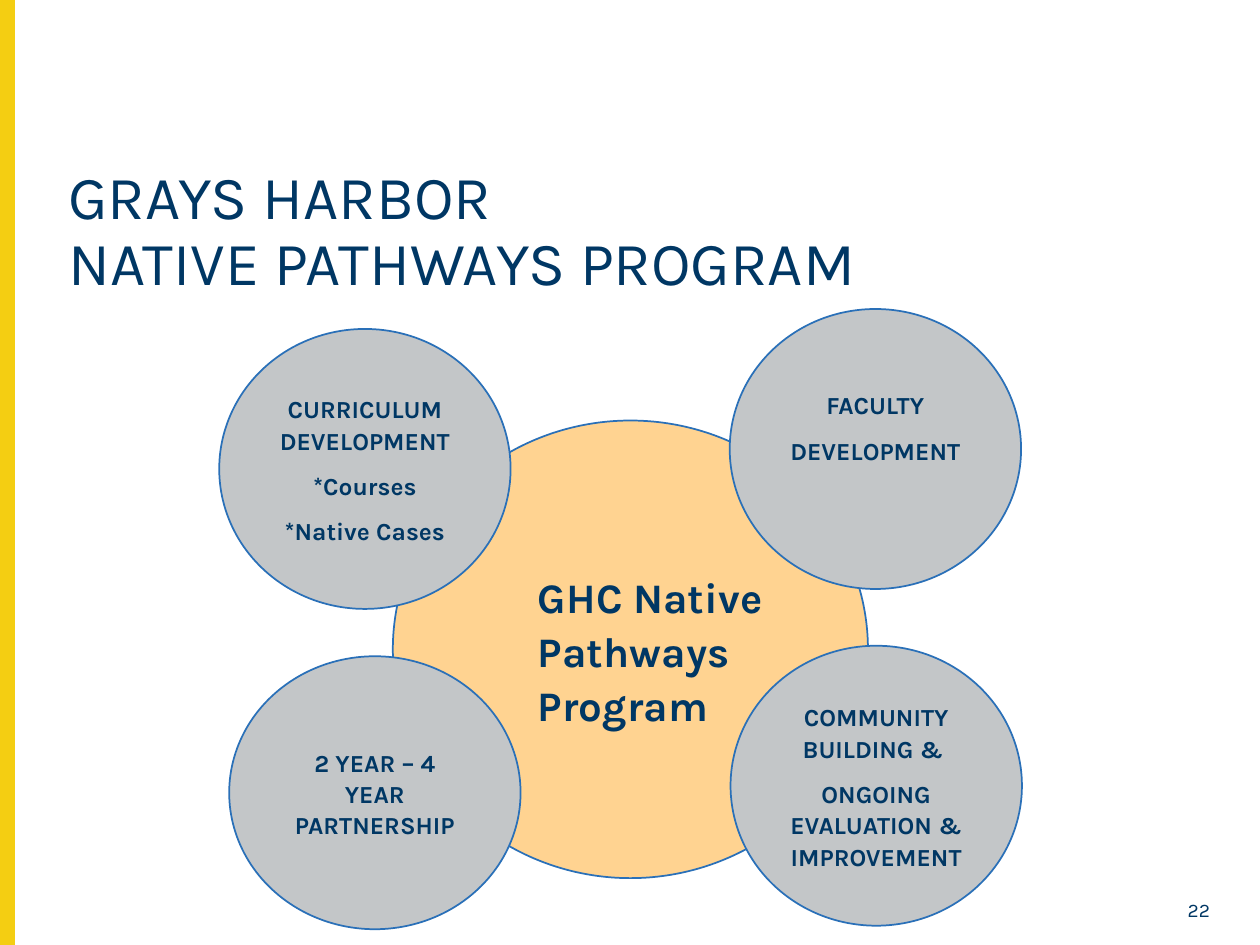
from pptx import Presentation
from pptx.dml.color import RGBColor
from pptx.enum.shapes import MSO_SHAPE
from pptx.enum.text import MSO_ANCHOR, PP_ALIGN
from pptx.util import Pt

NAVY = RGBColor(0x00, 0x37, 0x64)
GOLD = RGBColor(0xF4, 0xCE, 0x12)
PEACH = RGBColor(0xFF, 0xD3, 0x91)
GRAY = RGBColor(0xC3, 0xC6, 0xC8)
BLUE = RGBColor(0x2A, 0x70, 0xB8)
RECTANGLE, ELLIPSE = MSO_SHAPE.RECTANGLE, MSO_SHAPE.OVAL
LEFT, CENTER, RIGHT = PP_ALIGN.LEFT, PP_ALIGN.CENTER, PP_ALIGN.RIGHT
TOP, MIDDLE = MSO_ANCHOR.TOP, MSO_ANCHOR.MIDDLE
FONT = "Karla"


def write(frame, paragraphs, size, bold=False, align=LEFT, anchor=TOP,
          line_spacing=1.0, space_after=0):
    """Fill a text frame, one paragraph for each string."""
    frame.word_wrap = True
    frame.vertical_anchor = anchor
    for index, text in enumerate(paragraphs):
        paragraph = frame.paragraphs[0] if index == 0 else frame.add_paragraph()
        paragraph.text = text
        paragraph.alignment = align
        paragraph.line_spacing = line_spacing
        paragraph.space_after = Pt(space_after)
        font = paragraph.font
        font.name, font.size, font.bold = FONT, Pt(size), bold
        font.color.rgb = NAVY


class Deck:
    def __init__(self, width, height):
        self.presentation = Presentation()
        self.presentation.slide_width = Pt(width)
        self.presentation.slide_height = Pt(height)
        self.slide = self.presentation.slides.add_slide(
            self.presentation.slide_layouts[6])

    def shape(self, kind, box, fill, line):
        shape = self.slide.shapes.add_shape(kind, *map(Pt, box))
        shape.shadow.inherit = False
        shape.fill.solid()
        shape.fill.fore_color.rgb = fill
        shape.line.color.rgb = line
        shape.line.width = Pt(1)
        return shape

    def circle(self, box, fill, paragraphs, size, align=CENTER):
        circle = self.shape(ELLIPSE, box, fill, BLUE)
        write(circle.text_frame, paragraphs, size, bold=True, align=align,
              anchor=MIDDLE, line_spacing=1.07, space_after=8)
        return circle.text_frame

    def text(self, box, paragraphs, size, **style):
        textbox = self.slide.shapes.add_textbox(*map(Pt, box))
        write(textbox.text_frame, paragraphs, size, **style)


def main():
    deck = Deck(720, 540)

    # Side band and title
    deck.shape(RECTANGLE, (0, 0, 8, 540), GOLD, GOLD)
    deck.text((32, 91.5, 656, 82), ["GRAYS HARBOR\vNATIVE PATHWAYS PROGRAM"],
              35, line_spacing=0.9)

    # Program hub
    hub = deck.circle((224.5, 240.3, 271.5, 261.5), PEACH,
                      ["GHC Native Pathways Program"], 24, align=LEFT)
    hub.margin_left = Pt(43.2)

    # Program areas around the hub
    width, height = 166.5, 160
    faculty = deck.circle((417, 176.6, width, height), GRAY,
                          ["FACULTY", "DEVELOPMENT"], 14)
    faculty.margin_bottom = Pt(29)  # lifts the text above the middle
    deck.circle((131, 375, width, 156), GRAY,
                ["2 YEAR – 4 YEAR PARTNERSHIP"], 14)
    deck.circle((125.3, 188, width, height), GRAY,
                ["CURRICULUM DEVELOPMENT", "*Courses", "*Native Cases"], 14)
    deck.circle((417.5, 369, width, height), GRAY,
                ["COMMUNITY BUILDING & ",
                 "ONGOING EVALUATION & IMPROVEMENT"], 14)

    # Page number
    deck.text((661.5, 510.5, 37, 19), ["22"], 11, align=RIGHT, anchor=MIDDLE)

    deck.presentation.save("out.pptx")


if __name__ == "__main__":
    main()
